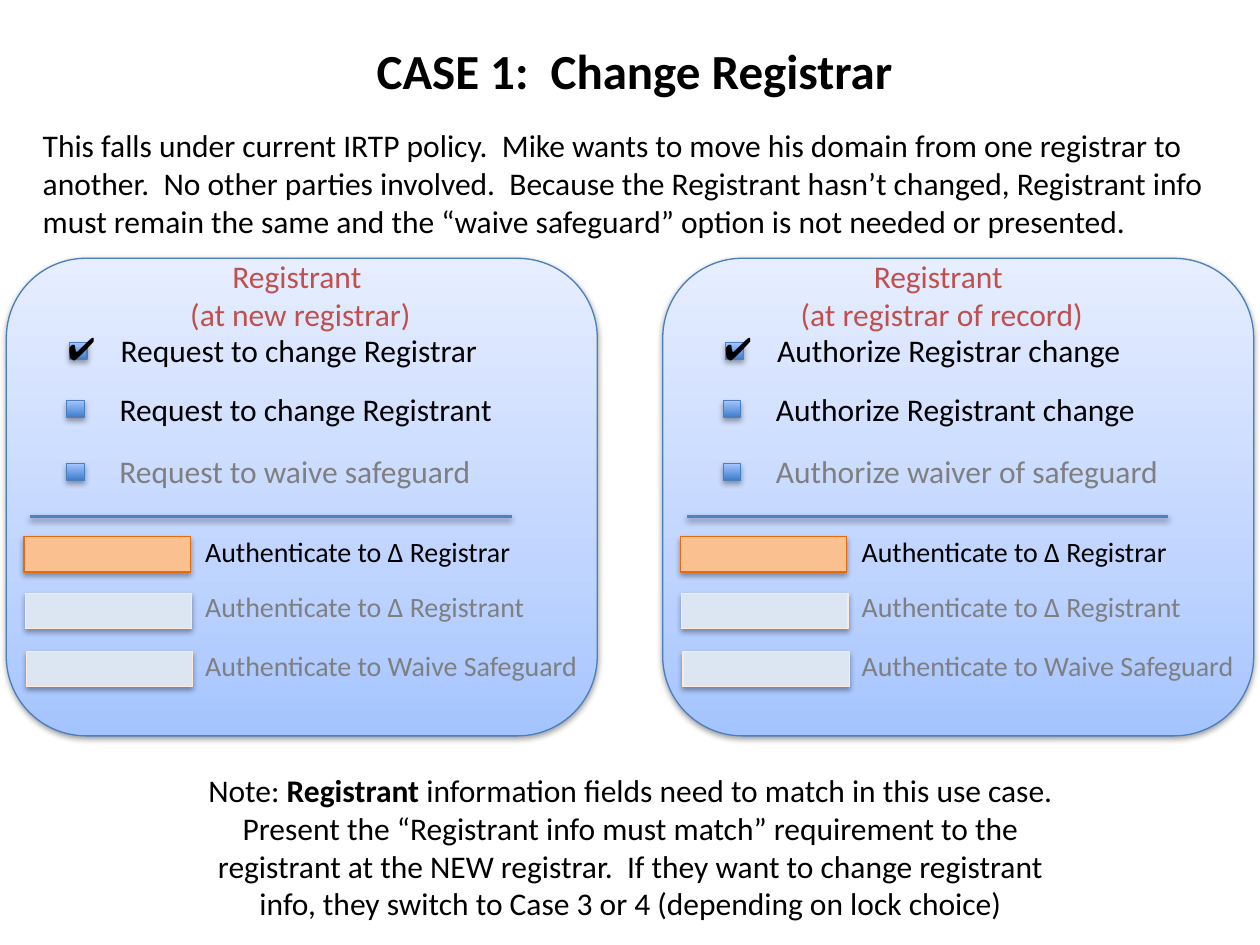
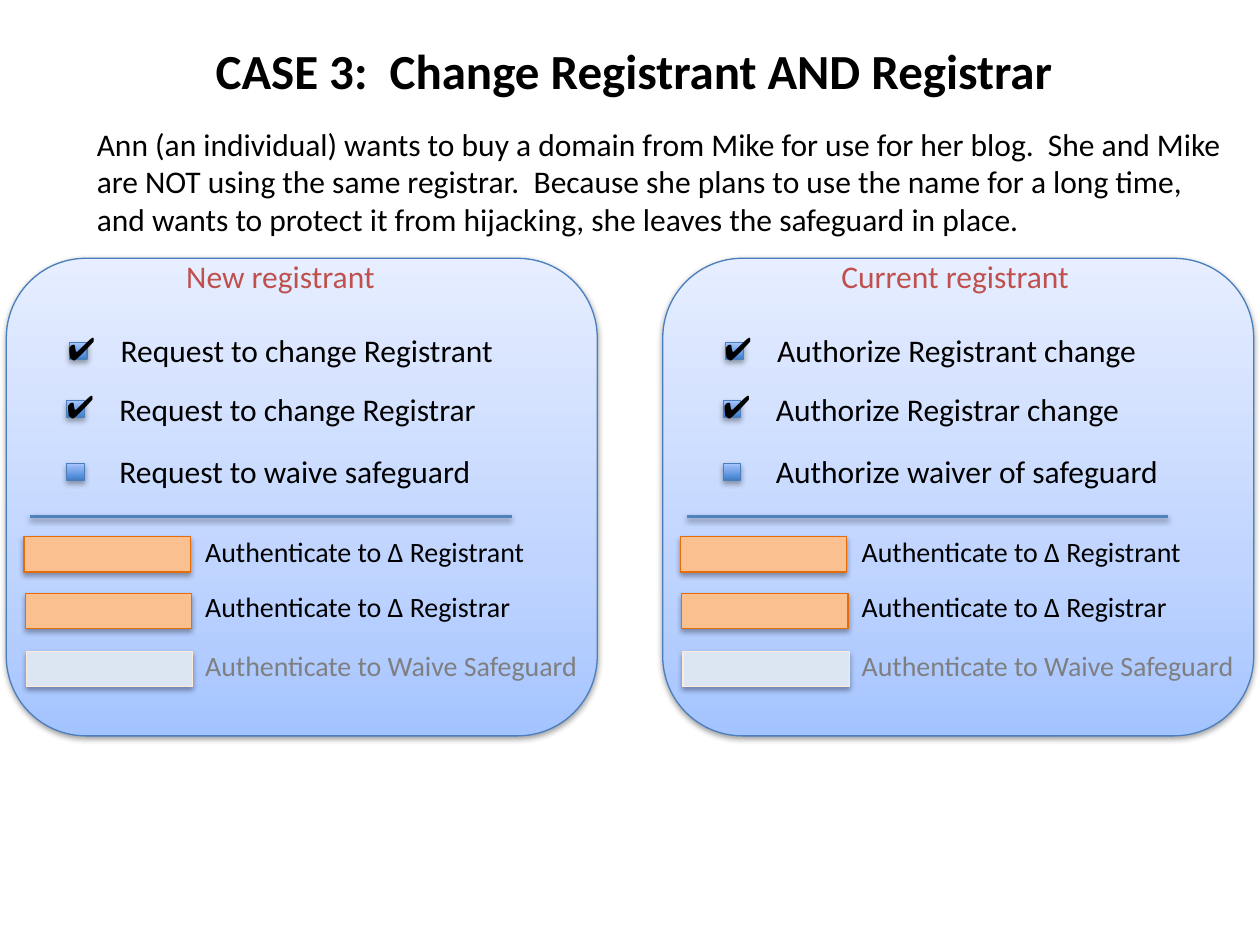
from typing import Any, NamedTuple

from lxml.etree import SubElement
from pptx import Presentation
from pptx.dml.color import RGBColor
from pptx.enum.shapes import MSO_CONNECTOR, MSO_SHAPE
from pptx.enum.text import MSO_ANCHOR, MSO_AUTO_SIZE, PP_ALIGN
from pptx.oxml.ns import qn
from pptx.util import Pt

EMU_PER_PX = 9144
COLORS = {
    "text": "000000",
    "muted": "7F7F7F",
    "heading": "C0504D",
    "outline": "4B7EBC",
    "divider": "4F81BD",
    "active_fill": "FAC090",
    "active_line": "E46C0A",
    "idle_fill": "DCE6F2",
    "idle_line": "FDEADA",
    "shadow": "000000",
}
PANEL_GRADIENT = {0: "A4C4FF", 35: "BFD4FF", 100: "E6EEFF"}
BOX_GRADIENT = {0: "3F80CE", 100: "A4C4FF"}
BODY = {"name": "Calibri", "size": Pt(18), "bold": False}
SMALL = BODY | {"size": Pt(16)}
TITLE = BODY | {"size": Pt(28), "bold": True}
CHECK = BODY | {"name": "Arial"}
PANEL_LEFTS = (5, 526)
OPTION_LEFTS = (81, 80, 80)
OPTION_TOPS = (258, 305, 354)
BOX_LEFTS = (50, 48, 48)
BOX_TOPS = (272, 318, 368)
CHECK_TOPS = (256, 302, 349)
LABEL_TOPS = (419, 463, 510)
TOKEN_TOPS = (426, 471, 517)


class Frame(NamedTuple):
    left: int
    top: int
    width: int
    height: int

    def emu(self) -> list[int]:
        return [length * EMU_PER_PX for length in self]


class Option(NamedTuple):
    text: str
    width: int
    checked: bool = False
    muted: bool = False


class Authentication(NamedTuple):
    text: str
    width: int
    active: bool


class Heading(NamedTuple):
    text: str
    frame: Frame
    wrap: bool


class Panel(NamedTuple):
    heading: Heading
    options: list[Option]


class Case(NamedTuple):
    title: str
    title_frame: Frame
    intro: str
    intro_frame: Frame
    panels: list[Panel]
    authentications: list[Authentication]
    note: list[tuple[str, bool]]


NOTE_FRAME = Frame(151, 607, 699, 131)
WAIVE = Authentication("Authenticate to Waive Safeguard", 322, False)

CASES = [
    Case(
        "CASE 1:  Change Registrar",
        Frame(285, 27, 437, 57),
        "This falls under current IRTP policy.  Mike wants to move his domain from one registrar to "
        "another.  No other parties involved.  Because the Registrant hasn’t changed, Registrant info "
        "must remain the same and the “waive safeguard” option is not needed or presented.",
        Frame(24, 95, 942, 101),
        [
            Panel(
                Heading("Registrant \v(at new registrar)", Frame(80, 199, 307, 71), True),
                [
                    Option("Request to change Registrar", 308, checked=True),
                    Option("Request to change Registrant", 322),
                    Option("Request to waive safeguard", 304, muted=True),
                ],
            ),
            Panel(
                Heading("Registrant \v(at registrar of record)", Frame(68, 199, 307, 71), True),
                [
                    Option("Authorize Registrar change", 297, checked=True),
                    Option("Authorize Registrant change", 310),
                    Option("Authorize waiver of safeguard", 329, muted=True),
                ],
            ),
        ],
        [
            Authentication("Authenticate to Δ Registrar", 268, True),
            Authentication("Authenticate to Δ Registrant", 279, False),
            WAIVE,
        ],
        [
            ("Note: ", False),
            ("Registrant", True),
            (
                " information fields need to match in this use case. Present the “Registrant info must "
                "match” requirement to the registrant at the NEW registrar.  If they want to change "
                "registrant info, they switch to Case 3 or 4 (depending on lock choice)",
                False,
            ),
        ],
    ),
    Case(
        "CASE 3:  Change Registrant AND Registrar",
        Frame(155, 27, 696, 57),
        "Ann (an individual) wants to buy a domain from Mike for use for her blog.  She and Mike "
        "are NOT using the same registrar.  Because she plans to use the name for a long time, "
        "and wants to protect it from hijacking, she leaves the safeguard in place.",
        Frame(67, 94, 917, 101),
        [
            Panel(
                Heading("New registrant", Frame(133, 199, 173, 40), False),
                [
                    Option("Request to change Registrant", 333, checked=True),
                    Option("Request to change Registrar", 320, checked=True),
                    Option("Request to waive safeguard", 304),
                ],
            ),
            Panel(
                Heading("Current registrant", Frame(132, 199, 204, 40), False),
                [
                    Option("Authorize Registrant change", 310, checked=True),
                    Option("Authorize Registrar change", 297, checked=True),
                    Option("Authorize waiver of safeguard", 329),
                ],
            ),
        ],
        [
            Authentication("Authenticate to Δ Registrant", 279, True),
            Authentication("Authenticate to Δ Registrar", 268, True),
            WAIVE,
        ],
        [],
    ),
]


def rgb(name: str) -> RGBColor:
    return RGBColor.from_string(COLORS[name])


def set_attributes(target: Any, values: dict[str, Any]) -> None:
    for name, value in values.items():
        setattr(target, name, value)


def format_font(font: Any, style: dict[str, Any], color: str) -> None:
    set_attributes(font, style)
    font.color.rgb = rgb(color)


def add_shadow(shape: Any, opacity: int, distance: int) -> None:
    effects = SubElement(shape.element.spPr, qn("a:effectLst"))
    shadow = SubElement(
        effects, qn("a:outerShdw"),
        blurRad="40000", dist=str(distance), dir="5400000", rotWithShape="0",
    )
    color = SubElement(shadow, qn("a:srgbClr"), val=COLORS["shadow"])
    SubElement(color, qn("a:alpha"), val=str(opacity * 1000))


def fill_gradient(shape: Any, colors: dict[int, str]) -> None:
    shape.fill.gradient()
    shape.fill.gradient_angle = 90
    stops = shape.element.spPr.find(".//" + qn("a:gsLst"))
    stops.clear()
    for position, color in colors.items():
        stop = SubElement(stops, qn("a:gs"), pos=str(position * 1000))
        SubElement(stop, qn("a:srgbClr"), val=color)


def add_outlined(shapes: Any, kind: MSO_SHAPE, frame: Frame, line: str) -> Any:
    shape = shapes.add_shape(kind, *frame.emu())
    shape.line.color.rgb = rgb(line)
    shape.line.width = Pt(0.75)
    return shape


def add_text(
    shapes: Any, frame: Frame, runs: list[tuple[str, bool]], style: dict[str, Any],
    color: str = "text", wrap: bool = False, align: PP_ALIGN = PP_ALIGN.LEFT,
) -> None:
    text_frame = shapes.add_textbox(*frame.emu()).text_frame
    set_attributes(text_frame, {"word_wrap": wrap, "auto_size": MSO_AUTO_SIZE.SHAPE_TO_FIT_TEXT})
    paragraph = text_frame.paragraphs[0]
    paragraph.alignment = align
    for index, (text, bold) in enumerate(runs):
        for line_index, line in enumerate(text.split("\v")):
            if line_index:
                paragraph.add_line_break()
            run = paragraph.add_run()
            run.text = line
            format_font(run.font, style | {"bold": bold}, color)


def add_option(shapes: Any, left: int, index: int, option: Option) -> None:
    box = add_outlined(
        shapes, MSO_SHAPE.RECTANGLE, Frame(left + BOX_LEFTS[index], BOX_TOPS[index], 14, 13), "outline"
    )
    fill_gradient(box, BOX_GRADIENT)
    add_shadow(box, 35, 23000)
    add_text(
        shapes, Frame(left + OPTION_LEFTS[index], OPTION_TOPS[index], option.width, 40),
        [(option.text, False)], BODY, "muted" if option.muted else "text",
    )
    if option.checked:
        add_text(shapes, Frame(left + 39 - index, CHECK_TOPS[index], 43, 40), [("✔", False)], CHECK)


def add_authentication(shapes: Any, left: int, index: int, item: Authentication) -> None:
    state = "active" if item.active else "idle"
    token = add_outlined(
        shapes, MSO_SHAPE.RECTANGLE, Frame(left + 14 + index, TOKEN_TOPS[index], 132, 28), f"{state}_line"
    )
    token.fill.solid()
    token.fill.fore_color.rgb = rgb(f"{state}_fill")
    add_shadow(token, 35, 23000)
    add_text(
        shapes, Frame(left + 148, LABEL_TOPS[index], item.width, 37),
        [(item.text, False)], SMALL, "text" if item.active else "muted",
    )


def add_panel(slide: Any, left: int, panel: Panel, authentications: list[Authentication]) -> None:
    shapes = slide.shapes.add_group_shape().shapes
    card = add_outlined(shapes, MSO_SHAPE.ROUNDED_RECTANGLE, Frame(left, 205, 469, 379), "outline")
    fill_gradient(card, PANEL_GRADIENT)
    add_shadow(card, 38, 20000)
    heading = panel.heading
    add_text(
        shapes, heading.frame._replace(left=left + heading.frame.left), [(heading.text, False)],
        BODY, "heading", heading.wrap, PP_ALIGN.CENTER if heading.wrap else PP_ALIGN.LEFT,
    )
    for index, option in enumerate(panel.options):
        add_option(shapes, left, index, option)
    ends = Frame(left + 401, 410, left + 19, 410).emu()
    divider = shapes.add_connector(MSO_CONNECTOR.STRAIGHT, *ends)
    divider.line.color.rgb = rgb("divider")
    divider.line.width = Pt(2)
    add_shadow(divider, 38, 20000)
    for index, item in enumerate(authentications):
        add_authentication(shapes, left, index, item)


def add_title(slide: Any, text: str, frame: Frame) -> None:
    title = slide.shapes.title
    set_attributes(title, dict(zip(("left", "top", "width", "height"), frame.emu())))
    set_attributes(title.text_frame, {
        "text": text,
        "word_wrap": False,
        "auto_size": MSO_AUTO_SIZE.NONE,
        "vertical_anchor": MSO_ANCHOR.TOP,
    })
    paragraph = title.text_frame.paragraphs[0]
    paragraph.alignment = PP_ALIGN.CENTER
    format_font(paragraph.runs[0].font, TITLE, "text")


def add_case(presentation: Any, case: Case) -> None:
    slide = presentation.slides.add_slide(presentation.slide_layouts[5])
    add_title(slide, case.title, case.title_frame)
    add_text(slide.shapes, case.intro_frame, [(case.intro, False)], BODY, wrap=True)
    for left, panel in zip(PANEL_LEFTS, case.panels):
        add_panel(slide, left, panel, case.authentications)
    if case.note:
        add_text(slide.shapes, NOTE_FRAME, case.note, BODY, wrap=True, align=PP_ALIGN.CENTER)


def main() -> None:
    presentation = Presentation()
    presentation.slide_width = 1000 * EMU_PER_PX
    presentation.slide_height = 750 * EMU_PER_PX
    for case in CASES:
        add_case(presentation, case)
    presentation.save("out.pptx")


if __name__ == "__main__":
    main()
